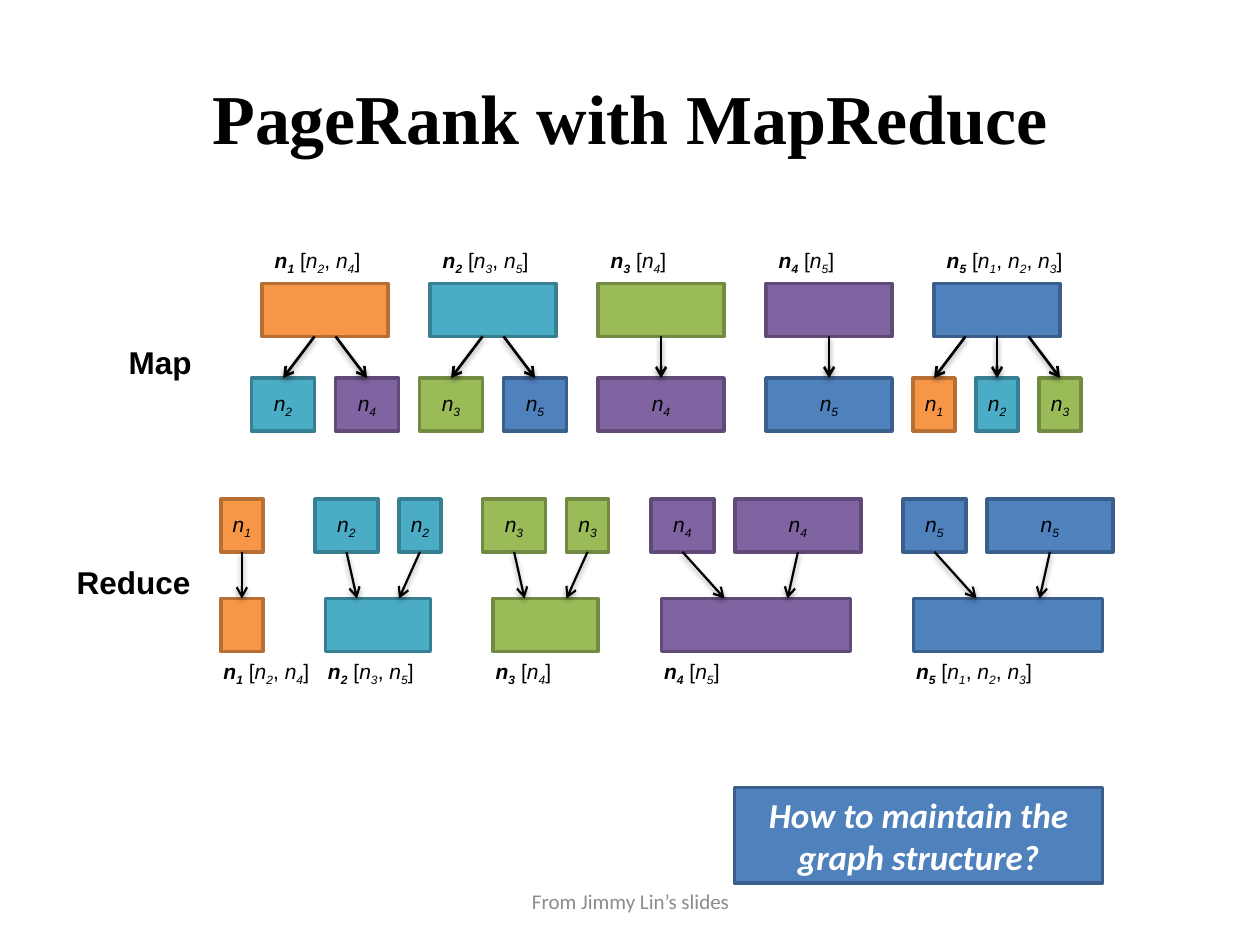
import lxml.etree
import pptx
import pptx.dml.color
import pptx.enum.shapes
import pptx.enum.text
import pptx.oxml
import pptx.oxml.ns
import pptx.util
from pptx.util import Inches

GRAPH = {1: [2, 4], 2: [3, 5], 3: [4], 4: [5], 5: [1, 2, 3]}
NODE_COLORS = {  # fill, line
    1: ("F79646", "B76F34"),
    2: ("4BACC6", "377F92"),
    3: ("9BBB59", "738A42"),
    4: ("8064A2", "5F4A78"),
    5: ("4F81BD", "3A5F8C"),
}
REDUCE_CENTERS = {1: 1.92, 2: 3, 3: 4.33, 4: 6, 5: 8}
MAP_ARROW_STEPS = {1: 0, 2: 1 / 6, 3: 1 / 4}
MAP_FIRST_CENTER, MAP_PITCH = 2.58, 4 / 3
BOX_HEIGHT = 0.42
BOX_GAP = 1 / 6
PLAIN_TABLE_STYLE = "{2D5ABB26-0587-4C30-8999-92F81FD0307C}"
ARROW_SHADOW = (
    '<a:effectLst xmlns:a="http://schemas.openxmlformats.org/drawingml/2006/main">'
    '<a:outerShdw blurRad="40000" dist="20000" dir="5400000" rotWithShape="0">'
    '<a:srgbClr val="000000"><a:alpha val="38000"/></a:srgbClr>'
    "</a:outerShdw></a:effectLst>"
)
CENTER = pptx.enum.text.PP_ALIGN.CENTER
RIGHT = pptx.enum.text.PP_ALIGN.RIGHT
MIDDLE = pptx.enum.text.MSO_ANCHOR.MIDDLE


def rgb(value):
    return pptx.dml.color.RGBColor.from_string(value)


def set_attributes(target, values):
    for name, value in values.items():
        setattr(target, name, value)


def add_run(paragraph, text, size, color="000000", subscript=False, **font_values):
    run = paragraph.add_run()
    run.text = text
    run.font.size = pptx.util.Pt(size)
    run.font.color.rgb = rgb(color)
    set_attributes(run.font, {"name": "Arial", **font_values})
    if subscript:
        run.font._element.set("baseline", "-25000")


def add_node_name(paragraph, node, bold=False):
    """Write an italic n with the node number as a subscript."""
    add_run(paragraph, "n", 12, italic=True, bold=bold)
    add_run(paragraph, str(node), 12, italic=True, bold=bold, subscript=True)


def add_box(slide, left, top, width, height, colors, preset="RECTANGLE"):
    kind = getattr(pptx.enum.shapes.MSO_SHAPE, preset)
    box = slide.shapes.add_shape(
        kind, Inches(left), Inches(top), Inches(width), Inches(height))
    fill_color, line_color = colors
    box.shadow.inherit = False
    box.fill.solid()
    box.fill.fore_color.rgb = rgb(fill_color)
    box.line.color.rgb = rgb(line_color)
    box.line.width = pptx.util.Pt(2)
    return box


def add_node_box(slide, center, top, width, node, named=False):
    box = add_box(slide, center - width / 2, top, width, BOX_HEIGHT, NODE_COLORS[node])
    if named:
        set_attributes(box.text_frame, {
            "margin_left": 0, "margin_right": 0, "margin_top": 0, "margin_bottom": 0,
            "word_wrap": False, "vertical_anchor": MIDDLE})
        paragraph = box.text_frame.paragraphs[0]
        paragraph.alignment = CENTER
        add_node_name(paragraph, node)


def add_arrow(slide, start, end, width):
    points = [Inches(value) for value in (*start, *end)]
    arrow = slide.shapes.add_connector(
        pptx.enum.shapes.MSO_CONNECTOR.STRAIGHT, *points)
    arrow.line.color.rgb = rgb("000000")
    arrow.line.width = pptx.util.Pt(width)
    lxml.etree.SubElement(
        arrow.line._get_or_add_ln(), pptx.oxml.ns.qn("a:tailEnd"), type="arrow")
    arrow._element.spPr.append(pptx.oxml.parse_xml(ARROW_SHADOW))


def add_adjacency_label(slide, left, top, node):
    """Add a one-cell table with a node and its list of neighbors."""
    frame = slide.shapes.add_table(
        1, 1, Inches(left), Inches(top), Inches(1.58), Inches(0.31))
    set_attributes(frame.table, {"first_row": False, "horz_banding": False})
    style = next(frame._element.iter(pptx.oxml.ns.qn("a:tableStyleId")))
    style.text = PLAIN_TABLE_STYLE
    cell = frame.table.cell(0, 0)
    cell.fill.background()
    paragraph = cell.text_frame.paragraphs[0]
    add_node_name(paragraph, node, bold=True)
    separator = " ["
    for neighbor in GRAPH[node]:
        add_run(paragraph, separator, 12)
        add_node_name(paragraph, neighbor)
        separator = ", "
    add_run(paragraph, "]", 12)


def add_text(slide, left, top, width, height, text, size, alignment, wrap=False, **font):
    box = slide.shapes.add_textbox(
        Inches(left), Inches(top), Inches(width), Inches(height))
    set_attributes(box.text_frame, {"word_wrap": wrap, "vertical_anchor": MIDDLE})
    paragraph = box.text_frame.paragraphs[0]
    paragraph.alignment = alignment
    add_run(paragraph, text, size, **font)


def row_centers(center, widths):
    """Return the centers of boxes set side by side around a center."""
    left = center - (sum(widths) + BOX_GAP * (len(widths) - 1)) / 2
    centers = []
    for width in widths:
        centers.append(left + width / 2)
        left += width + BOX_GAP
    return centers


def spread(center, count, step):
    return [center + (index - (count - 1) / 2) * step for index in range(count)]


def add_map_group(slide, node, neighbors):
    """Split a node's box into equal shares for its neighbors."""
    center = MAP_FIRST_CENTER + (node - 1) * MAP_PITCH
    count = len(neighbors)
    share = 1 / count
    add_adjacency_label(slide, center - 0.5, 1.93, node)
    add_node_box(slide, center, 2.25, 1, node)
    targets = row_centers(center, [share] * count)
    starts = spread(center, count, MAP_ARROW_STEPS[count])
    for neighbor, start, target in zip(neighbors, starts, targets):
        add_node_box(slide, target, 3, share, neighbor, named=True)
        add_arrow(slide, (start, 2.67), (target, 3), 1.5)


def add_reduce_group(slide, node, center):
    """Join the shares a node receives into one box as wide as their sum."""
    shares = [1 / len(neighbors) for neighbors in GRAPH.values() if node in neighbors]
    if node in (2, 3, 4, 5):
        shares = shares[:2]
    total = sum(shares)
    add_node_box(slide, center, 4.75, total, node)
    sources = row_centers(center, shares)
    ends = spread(center, len(shares), min(shares))
    for share, source, end in zip(shares, sources, ends):
        add_node_box(slide, source, 3.96, share, node, named=True)
        add_arrow(slide, (source, 4.38), (end, 4.75), 1.25)
    add_adjacency_label(slide, center - total / 2 - 0.08, 5.19, node)


def add_title(slide, text):
    title = slide.shapes.title
    set_attributes(title, {"left": Inches(0.5), "top": Inches(0.3),
                           "width": Inches(9), "height": Inches(1.25)})
    title.text_frame.vertical_anchor = MIDDLE
    paragraph = title.text_frame.paragraphs[0]
    paragraph.alignment = CENTER
    add_run(paragraph, text, 40, name="Times New Roman", bold=True)


def add_question(slide, text):
    colors = NODE_COLORS[5]
    box = add_box(slide, 5.83, 6.25, 2.92, 0.76, colors, "FLOWCHART_PROCESS")
    set_attributes(box.text_frame, {"word_wrap": True, "vertical_anchor": MIDDLE})
    paragraph = box.text_frame.paragraphs[0]
    paragraph.alignment = CENTER
    add_run(paragraph, text, 20, "FFFFFF", name="Calibri", bold=True, italic=True)


def main():
    presentation = pptx.Presentation()
    presentation.slide_width = Inches(10)
    presentation.slide_height = Inches(7.5)
    slide = presentation.slides.add_slide(presentation.slide_layouts[5])
    add_title(slide, "PageRank with MapReduce")
    for node, neighbors in GRAPH.items():
        add_map_group(slide, node, neighbors)
    for node, center in REDUCE_CENTERS.items():
        add_reduce_group(slide, node, center)
    add_text(slide, 0.91, 2.67, 0.71, 0.4, "Map", 18, RIGHT, bold=True)
    add_text(slide, 0.5, 4.42, 1.11, 0.4, "Reduce", 18, RIGHT, bold=True)
    add_question(slide, "How to maintain the graph structure?")
    add_text(slide, 3.42, 6.95, 3.17, 0.4, "From Jimmy Lin’s slides", 12, CENTER,
             wrap=True, name="Calibri", color="8C8C8C")
    presentation.save("out.pptx")


if __name__ == "__main__":
    main()
